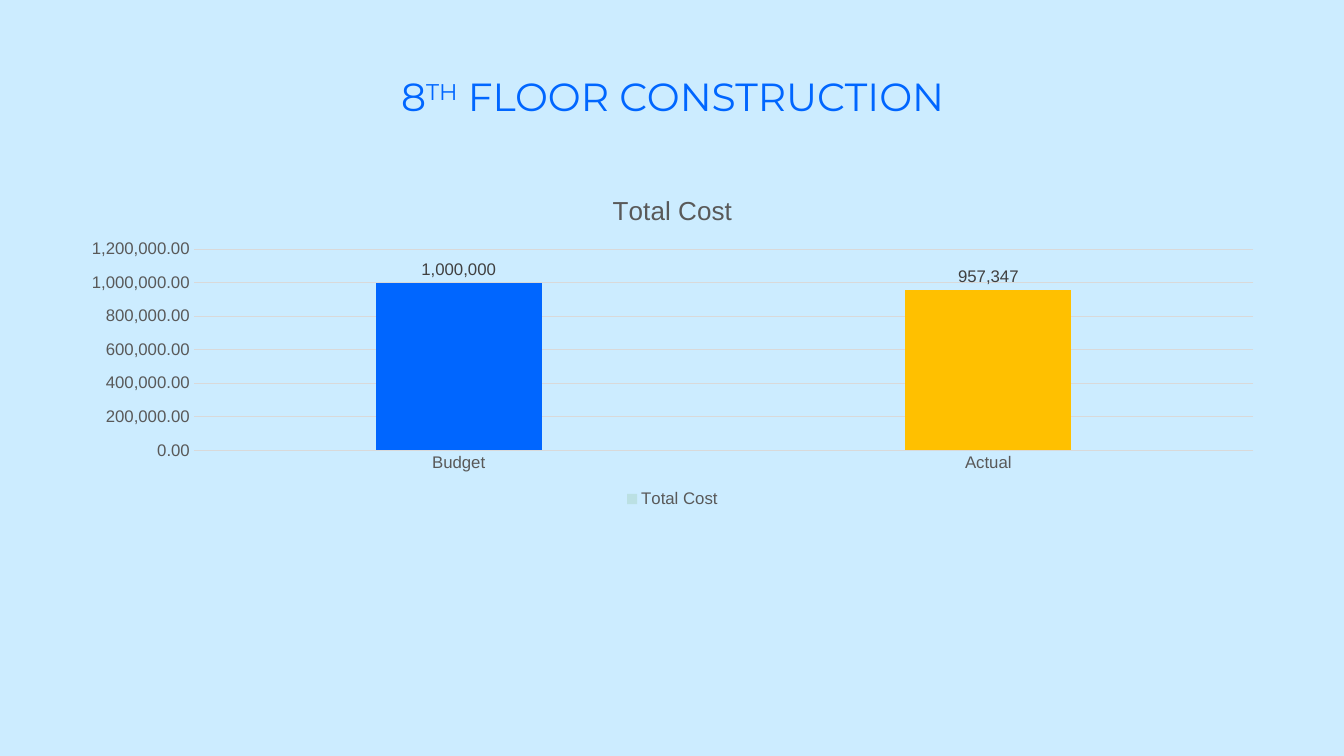
from dataclasses import dataclass

from pptx import Presentation
from pptx.chart.data import CategoryChartData as ChartData
from pptx.dml.color import RGBColor as Rgb
from pptx.enum.chart import XL_CHART_TYPE as Kind
from pptx.enum.chart import XL_LABEL_POSITION as LabelPos
from pptx.enum.chart import XL_LEGEND_POSITION as KeyPos
from pptx.enum.chart import XL_TICK_MARK as Tick
from pptx.enum.text import MSO_ANCHOR as Anchor
from pptx.enum.text import PP_ALIGN as Align
from pptx.util import Inches, Pt


@dataclass(frozen=True)
class Theme:
    """Colours, fonts and type sizes of the slide."""
    back: str = "CCECFF"
    blue: str = "0066FF"
    gold: str = "FFC000"
    pale: str = "BBE0E3"
    grey: str = "595959"
    dark: str = "404040"
    rule: str = "D9D9D9"
    head: str = "Montserrat"
    body: str = "Arial"
    big: float = 28
    mid: float = 18.6
    small: float = 12


THEME = Theme()


def style(font, face, size, color):
    """Set the face, size and colour of a font."""
    font.name = face
    font.size = Pt(size)
    font.bold = False
    font.color.rgb = Rgb.from_string(color)


def paint(fill, color):
    """Make a fill solid in one colour."""
    fill.solid()
    fill.fore_color.rgb = Rgb.from_string(color)


def rule(line):
    """Draw a thin chart line."""
    paint(line.fill, THEME.rule)
    line.width = Pt(0.75)


def add_title(slide, box):
    """Place the centred title with its raised ordinal."""
    frame = slide.shapes.add_textbox(*box).text_frame
    frame.word_wrap = True
    frame.vertical_anchor = Anchor.MIDDLE
    para = frame.paragraphs[0]
    para.alignment = Align.CENTER
    for text, rise in (("8", 0), ("TH", 30000), (" FLOOR CONSTRUCTION", 0)):
        run = para.add_run()
        run.text = text
        style(run.font, THEME.head, THEME.big, THEME.blue)
        if rise:
            run._r.get_or_add_rPr().set("baseline", str(rise))


def style_axes(chart):
    """Format both axes and the grid."""
    for axis in (chart.category_axis, chart.value_axis):
        axis.major_tick_mark = axis.minor_tick_mark = Tick.NONE
        style(axis.tick_labels.font, THEME.body, THEME.small, THEME.grey)
    rule(chart.category_axis.format.line)
    cost = chart.value_axis
    cost.minimum_scale = 0
    cost.format.line.fill.background()
    rule(cost.major_gridlines.format.line)
    cost.tick_labels.number_format = "#,##0.00"
    cost.tick_labels.number_format_is_linked = False


def style_bars(plot):
    """Colour the bars and show their values."""
    plot.gap_width = 219
    plot.overlap = -27
    plot.vary_by_categories = False
    bars = plot.series[0]
    paint(bars.format.fill, THEME.pale)
    for spot, color in enumerate((THEME.blue, THEME.gold)):
        paint(bars.points[spot].format.fill, color)
    labels = bars.data_labels
    labels.show_value = True
    labels.position = LabelPos.OUTSIDE_END
    labels.number_format = "#,##0"
    labels.number_format_is_linked = False
    style(labels.font, THEME.body, THEME.small, THEME.dark)


def add_cost(slide, box):
    """Place the chart of budget against actual cost."""
    data = ChartData()
    data.categories = ["Budget", "Actual"]
    data.add_series("Total Cost", (1000000, 957347))
    chart = slide.shapes.add_chart(Kind.COLUMN_CLUSTERED, *box, data).chart
    style(chart.font, THEME.body, THEME.small, THEME.grey)
    chart.has_title = True
    frame = chart.chart_title.text_frame
    frame.text = "Total Cost"
    style(frame.paragraphs[0].runs[0].font, THEME.body, THEME.mid, THEME.grey)
    chart.chart_title.include_in_layout = False
    chart.has_legend = True
    chart.legend.position = KeyPos.BOTTOM
    chart.legend.include_in_layout = False
    style(chart.legend.font, THEME.body, THEME.small, THEME.grey)
    style_axes(chart)
    style_bars(chart.plots[0])


def main():
    """Build and save the slide."""
    deck = Presentation()
    deck.slide_width = Inches(13.33)
    deck.slide_height = Inches(7.5)
    slide = deck.slides.add_slide(deck.slide_layouts[6])
    paint(slide.background.fill, THEME.back)
    left, width = Inches(0.67), Inches(12)
    add_title(slide, (left, Inches(0.33), width, Inches(1.25)))
    add_cost(slide, (left, Inches(1.75), width, Inches(3.33)))
    deck.save("out.pptx")


if __name__ == "__main__":
    main()
